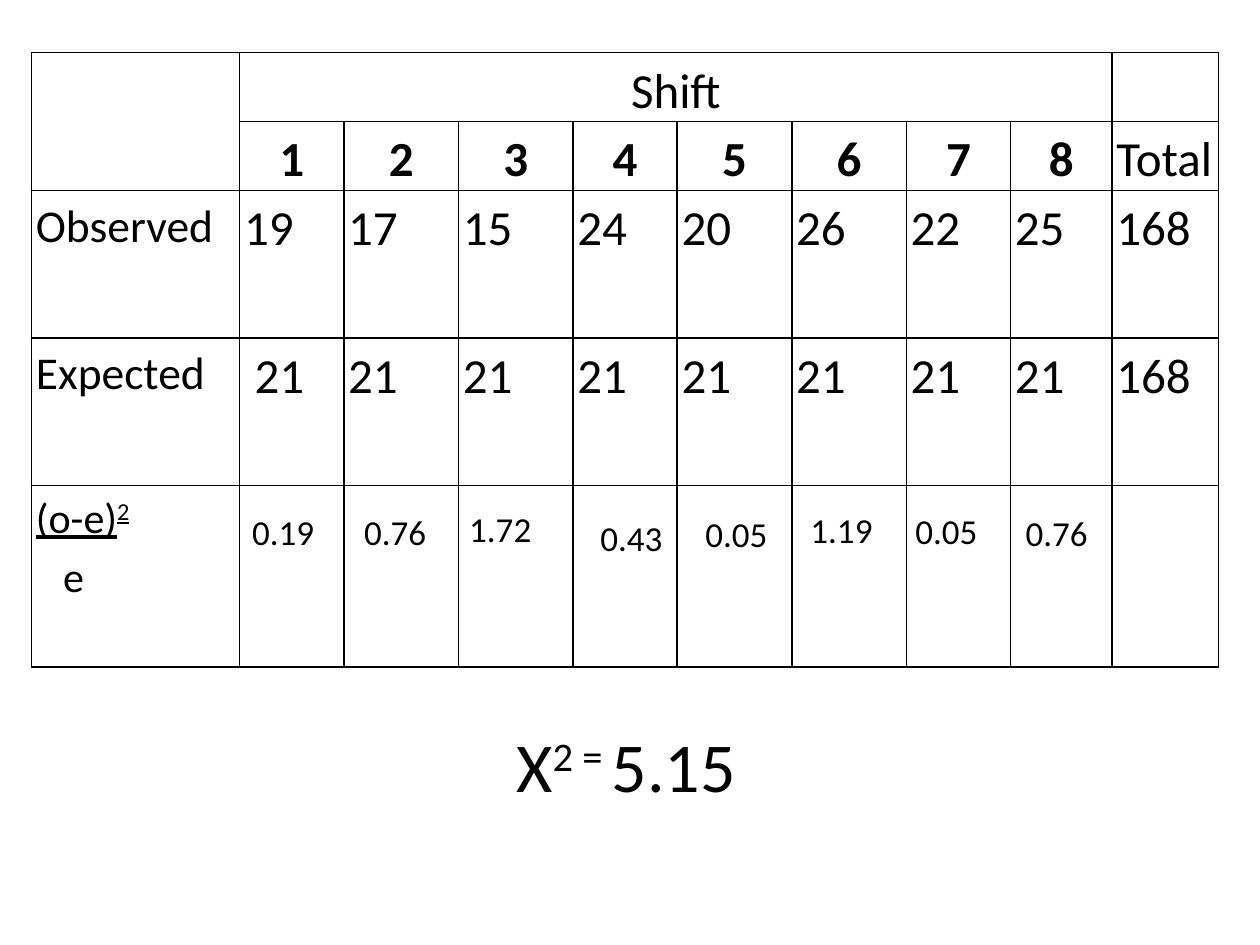
from pptx import Presentation
from pptx.dml.color import RGBColor
from pptx.enum import text as t
from pptx.oxml import parse_xml
from pptx.oxml.ns import nsdecls
from pptx.util import Pt

INK = "000000"
COLS = [119, 59.5, 65.5, 65.5, 59.5, 65.5, 65.5, 59.5, 58, 61]
ROWS = [39.4, 39.4, 84.4, 84.4, 103.5]
COUNTS = ["19", "17", "15", "24", "20", "26", "22", "25", "168"]
MEANS = ["21"] * 8 + ["168"]
TERMS = [
    ("0.19", 137, 288), ("0.76", 201, 288), ("1.72", 261, 286.5),
    ("0.43", 336, 291.5), ("0.05", 396, 289.5), ("1.19", 456, 287),
    ("0.05", 516, 287.5), ("0.76", 579, 288.5),
]


def color(code):
    """Turn a hex string into a colour."""
    return RGBColor.from_string(code)


def add_run(para, words, size, bold=False, line=False, sup=False):
    """Add one styled run to a paragraph."""
    run = para.add_run()
    run.text = words
    font = run.font
    font.name, font.size, font.bold = "Calibri", Pt(size), bold
    font.underline = line
    font.color.rgb = color(INK)
    if sup:
        run._r.get_or_add_rPr().set("baseline", "30000")


def indent(para, gap):
    """Set the left margin of a paragraph."""
    para._p.get_or_add_pPr().set("marL", str(Pt(gap)))


def frame(cell):
    """Give a cell thin black borders, small margins and no fill."""
    cell.margin_left = cell.margin_right = Pt(2.5)
    cell.margin_top = cell.margin_bottom = 0
    props = cell._tc.get_or_add_tcPr()
    for side in "LRTB":
        props.append(parse_xml(
            f'<a:ln{side} {nsdecls("a")} w="{Pt(1)}"><a:solidFill>'
            f'<a:srgbClr val="{INK}"/></a:solidFill></a:ln{side}>'))
    cell.fill.background()


def write(cell, words, size=28, bold=False, mid=False):
    """Write one line into a cell."""
    para = cell.text_frame.paragraphs[0]
    para.line_spacing = 1.15
    if mid:
        para.alignment = t.PP_ALIGN.CENTER
    add_run(para, words, size, bold)


def write_ratio(cell):
    """Write the squared difference over the expected count."""
    top = cell.text_frame.paragraphs[0]
    low = cell.text_frame.add_paragraph()
    top.line_spacing = low.line_spacing = 1.15
    add_run(top, "(o-e)", 24, line=True)
    add_run(top, "2", 24, line=True, sup=True)
    indent(low, 15.5)
    add_run(low, "e", 24)


def add_grid(slide):
    """Build the table of shifts."""
    grid = slide.shapes.add_table(
        len(ROWS), len(COLS), Pt(18), Pt(30), Pt(sum(COLS)), Pt(sum(ROWS))).table
    grid.first_row = grid.horz_banding = False
    for col, wide in zip(grid.columns, COLS):
        col.width = Pt(wide)
    for row, high in zip(grid.rows, ROWS):
        row.height = Pt(high)
    for cell in grid.iter_cells():
        frame(cell)
    grid.cell(0, 0).merge(grid.cell(1, 0))
    grid.cell(0, 1).merge(grid.cell(0, 8))
    write(grid.cell(0, 1), "Shift", mid=True)
    for shift in range(1, 9):
        write(grid.cell(1, shift), str(shift), bold=True, mid=True)
    write(grid.cell(1, 9), "Total")
    for row, name, vals in ((2, "Observed", COUNTS), (3, "Expected", MEANS)):
        write(grid.cell(row, 0), name, 26)
        for col, val in enumerate(vals, 1):
            write(grid.cell(row, col), val)
    indent(grid.cell(3, 1).text_frame.paragraphs[0], 6)
    write_ratio(grid.cell(4, 0))


def add_box(slide, left, top, wide, high):
    """Add a text box and return its first paragraph."""
    body = slide.shapes.add_textbox(Pt(left), Pt(top), Pt(wide), Pt(high)).text_frame
    body.word_wrap = True
    body.auto_size = t.MSO_AUTO_SIZE.SHAPE_TO_FIT_TEXT
    return body.paragraphs[0]


def main():
    """Build and save the slide."""
    deck = Presentation()
    deck.slide_width, deck.slide_height = Pt(720), Pt(540)
    slide = deck.slides.add_slide(deck.slide_layouts[6])
    add_grid(slide)
    total = add_box(slide, 288, 409.5, 150, 55.5)
    add_run(total, "Χ", 40)
    add_run(total, "2 = ", 40, sup=True)
    add_run(total, "5.15", 40)
    for words, left, top in TERMS:
        add_run(add_box(slide, left, top, 60, 31.5), words, 20)
    deck.save("out.pptx")


if __name__ == "__main__":
    main()
